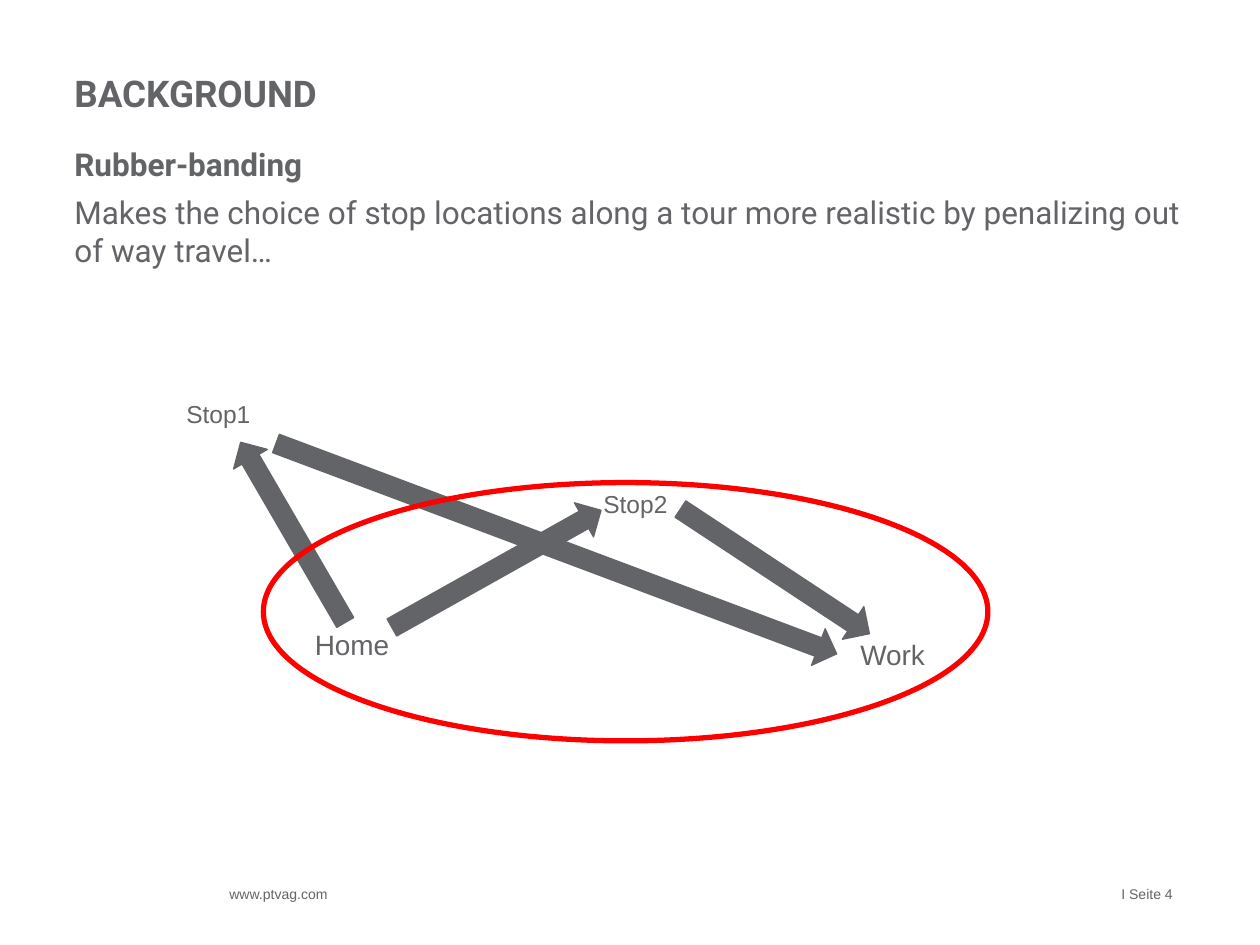
from dataclasses import dataclass
from math import atan2, degrees, hypot

from pptx import Presentation
from pptx.dml.color import RGBColor
from pptx.enum.shapes import MSO_SHAPE as Shape
from pptx.enum.text import MSO_ANCHOR as Anchor, MSO_AUTO_SIZE as AutoSize, PP_ALIGN as Align
from pptx.oxml.ns import qn
from pptx.util import Emu, Inches, Pt

GREY = RGBColor(0x63, 0x64, 0x67)
RED = RGBColor(0xFF, 0x00, 0x00)
COLS, ROWS = 100, 75
CELL = Inches(0.1)
MARGIN, CONTENT_W = 5.9, 88.2
ARROW_H = 3.1


@dataclass(frozen=True)
class Label:
    text: str
    col: float
    row: float
    w: float
    h: float
    size: int
    wrap: bool = False


@dataclass(frozen=True)
class Leg:
    """One trip of the tour, from tail to tip in (column, row)."""
    tail: tuple[float, float]
    tip: tuple[float, float]


FOOTERS = [
    Label("www.ptvag.com", 18.2, 69.2, 8.6, 2.4, 8),
    Label("I Seite 4", 89, 69.2, 6.7, 2.4, 8),
]
PLACES = [
    Label("Home", 24, 49.3, 8.7, 3.7, 16, wrap=True),
    Label("Work", 67.3, 50.1, 7.9, 3.7, 16, wrap=True),
    Label("Stop1", 13.8, 31.2, 7.1, 3.4, 14),
    Label("Stop2", 46.9, 38.3, 7.1, 3.4, 14),
]
LEGS = [
    Leg((27.4, 49.4), (19.1, 35.1)),
    Leg((21.9, 35.2), (66.4, 51.9)),
    Leg((31.1, 49.8), (47.7, 40.5)),
    Leg((54, 40.4), (69, 50.3)),
]


def cells(*counts: float) -> list[Emu]:
    return [Emu(round(n * CELL)) for n in counts]


def write(p, text: str, *, size: float, font: str = "Arial", bold: bool = False,
          after: float = 0, spacing: float = 1.0) -> None:
    p.alignment = Align.LEFT
    p.space_before, p.space_after, p.line_spacing = Pt(0), Pt(after), spacing
    r = p.add_run()
    r.text = text
    r.font.name, r.font.size, r.font.bold = font, Pt(size), bold
    r.font.color.rgb = GREY


def clear_insets(tf) -> None:
    tf.margin_left = tf.margin_top = tf.margin_right = tf.margin_bottom = 0


def place(sp, row: float, h: float):
    """Move a placeholder into the content column and return its text frame."""
    sp.left, sp.top, sp.width, sp.height = cells(MARGIN, row, CONTENT_W, h)
    tf = sp.text_frame
    clear_insets(tf)
    tf.word_wrap, tf.auto_size, tf.vertical_anchor = True, AutoSize.NONE, Anchor.TOP
    return tf


def remove_bullet(p) -> None:
    pPr = p._p.get_or_add_pPr()
    pPr.set("marL", "0")
    pPr.set("indent", "0")
    pPr.append(pPr.makeelement(qn("a:buNone"), {}))


def add_label(s, label: Label):
    tf = s.shapes.add_textbox(*cells(label.col, label.row, label.w, label.h)).text_frame
    tf.word_wrap = label.wrap
    write(tf.paragraphs[0], label.text, size=label.size)
    return tf


def add_footer(s, label: Label) -> None:
    tf = add_label(s, label)
    clear_insets(tf)
    tf.vertical_anchor = Anchor.BOTTOM


def add_leg(s, leg: Leg) -> None:
    (x1, y1), (x2, y2) = leg.tail, leg.tip
    length = hypot(x2 - x1, y2 - y1)
    sp = s.shapes.add_shape(Shape.RIGHT_ARROW, *cells(
        (x1 + x2 - length) / 2, (y1 + y2 - ARROW_H) / 2, length, ARROW_H))
    sp.rotation = degrees(atan2(y2 - y1, x2 - x1)) % 360
    sp.shadow.inherit = False
    sp.fill.solid()
    sp.fill.fore_color.rgb = GREY
    sp.line.color.rgb, sp.line.width = GREY, Pt(0.75)


def add_highlight(s) -> None:
    sp = s.shapes.add_shape(Shape.OVAL, *cells(20.9, 38.3, 57.5, 20.5))
    sp.shadow.inherit = False
    sp.fill.background()
    sp.line.color.rgb, sp.line.width = RED, Pt(3)


def main() -> None:
    prs = Presentation()
    prs.slide_width, prs.slide_height = cells(COLS, ROWS)
    s = prs.slides.add_slide(prs.slide_layouts[1])

    title = place(s.shapes.title, 5.4, 5.3)
    write(title.paragraphs[0], "BACKGROUND", size=21, font="Roboto", bold=True, spacing=1.05)

    body = place(s.placeholders[1], 11.5, 54.3)
    heading, text = body.paragraphs[0], body.add_paragraph()
    for p in (heading, text):
        remove_bullet(p)
    write(heading, "Rubber-banding", size=18, font="Roboto", bold=True, after=6)
    write(text, "Makes the choice of stop locations along a tour more realistic "
          "by penalizing out of way travel…", size=18, font="Roboto", after=6)

    for footer in FOOTERS:
        add_footer(s, footer)
    for label in PLACES:
        add_label(s, label)
    for leg in LEGS:
        add_leg(s, leg)
    add_highlight(s)
    prs.save("out.pptx")


if __name__ == "__main__":
    main()
